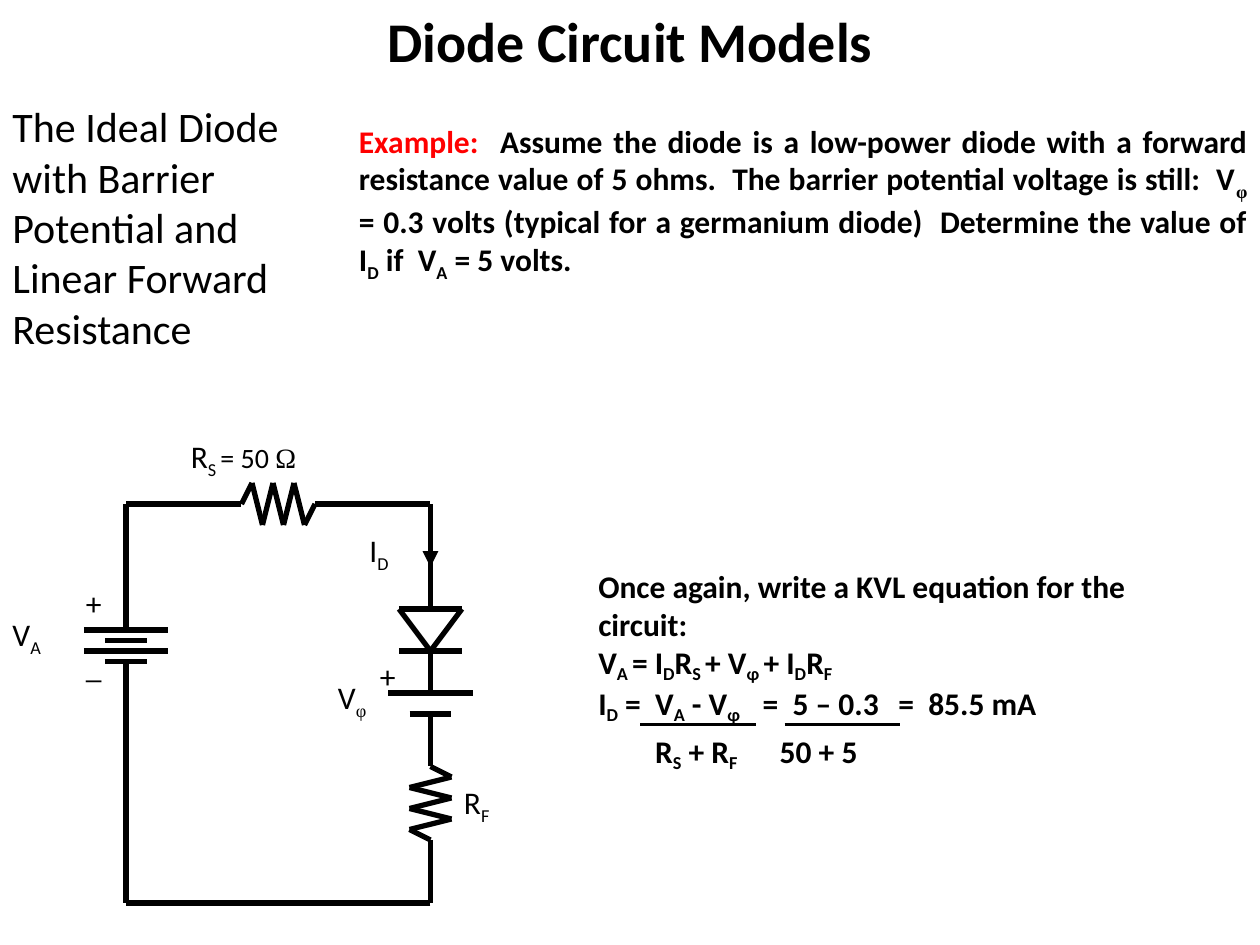
from itertools import groupby

from lxml import etree
from pptx import Presentation
from pptx.dml.color import RGBColor
from pptx.enum.shapes import MSO_CONNECTOR
from pptx.enum.text import MSO_ANCHOR, MSO_AUTO_SIZE, PP_ALIGN
from pptx.oxml.ns import qn
from pptx.util import Pt

LINE = MSO_CONNECTOR.STRAIGHT
TOP = MSO_ANCHOR.TOP
GROW = MSO_AUTO_SIZE.SHAPE_TO_FIT_TEXT
LEFT, CENTER, JUST = PP_ALIGN.LEFT, PP_ALIGN.CENTER, PP_ALIGN.JUSTIFY
SANS, SERIF = "Calibri", "Times New Roman"
GRID = 6  # circuit grid step in points


def paint(color, value):
    color.rgb = RGBColor.from_string(value)


def write(para, text, size=18, bold=False, color="000000", greek=SERIF, drop=25):
    """Add text to a paragraph; ~ turns subscript on and off."""
    for i, part in enumerate(text.split("~")):
        for is_greek, chars in groupby(part, lambda c: c in "φΩ"):
            run = para.add_run()
            run.text = "".join(chars)
            font = run.font
            font.size, font.bold = Pt(size), bold
            font.name = greek if is_greek else SANS
            paint(font.color, color)
            if i % 2:
                run._r.get_or_add_rPr().set("baseline", str(-drop * 1000))


def add_tabs(para, *stops):
    tabs = etree.SubElement(para._p.get_or_add_pPr(), qn("a:tabLst"))
    for stop in stops:
        etree.SubElement(tabs, qn("a:tab"), pos=str(Pt(stop)), algn="l")


def place(shape, box):
    shape.left, shape.top, shape.width, shape.height = map(Pt, box)
    frame = shape.text_frame
    frame.word_wrap, frame.auto_size = True, GROW
    frame.vertical_anchor = TOP
    return frame


def add_text(slide, box, text="", align=LEFT, **form):
    frame = place(slide.shapes.add_textbox(0, 0, 0, 0), box)
    para = frame.paragraphs[0]
    para.alignment = align
    if text:
        write(para, text, **form)
    return frame


def add_line(slide, start, end, width=3, arrow=False):
    line = slide.shapes.add_connector(LINE, *map(Pt, (*start, *end)))
    line.line.width = Pt(width)
    paint(line.line.color, "000000")
    if arrow:
        etree.SubElement(line.line._get_or_add_ln(), qn("a:tailEnd"), type="triangle")
    etree.SubElement(line._element.spPr, qn("a:effectLst"))


def add_wire(slide, *points, **form):
    """Join grid points with straight lines."""
    spots = [(x * GRID, y * GRID) for x, y in points]
    for start, end in zip(spots, spots[1:]):
        add_line(slide, start, end, **form)


def draw_circuit(slide):
    # Source side, with the series resistor on top
    zig = [(24 + i, 50 if i % 2 else 46) for i in range(6)]
    add_wire(slide, (12, 60), (12, 48), (23, 48), *zig, (30, 48), (41, 48), (41, 58))
    add_wire(slide, (41, 48), (41, 54), arrow=True)

    # Diode, then the barrier source and forward resistor
    add_wire(slide, (38, 58), (44, 58), (41, 62), (38, 58))
    add_wire(slide, (41, 62), (41, 66))
    zig = [(39 if i % 2 else 43, 74 + i) for i in range(6)]
    add_wire(slide, (41, 68), (41, 73), *zig, (41, 80), (41, 86), (12, 86), (12, 63))

    # Battery plates and diode bar: centre, height, half width
    plates = [(12, 60, 4), (12, 61, 2), (12, 62, 4), (12, 63, 2),
              (41, 62, 3), (41, 66, 4), (41, 68, 2)]
    for x, y, half in plates:
        add_wire(slide, (x - half, y), (x + half, y))

    # Labels
    labels = [("+", 42, 330, 36), ("_", 42, 366, 36), ("V~A~", 0, 348, 48),
              ("I~D~", 204, 300, 48), ("V~φ~", 186, 384, 54),
              ("+", 210, 372, 36), ("R~F~", 258, 444, 60)]
    for text, x, y, width in labels:
        add_text(slide, (x, y, width, 31), text)
    frame = add_text(slide, (102, 246, 108, 31), "R~S ~")
    write(frame.paragraphs[0], "= 50 Ω", size=16)


def solve(slide):
    form = dict(bold=True, greek=SANS, drop=20)
    frame = add_text(slide, (334.8, 320.4, 354, 121),
                     "Once again, write a KVL equation for the circuit:", **form)
    rows = [("V~A ~= I~D~R~S ~+ V~φ ~+ I~D~R~F~", ()),
            ("I~D~ =  V~A~ - V~φ~\t=  5 – 0.3\t=  85.5 mA", (94, 171.5)),
            ("\tR~S~ + R~F~\t50 + 5", (32.5, 103.7))]
    for text, stops in rows:
        para = frame.add_paragraph()
        if stops:
            add_tabs(para, *stops)
        write(para, text, **form)
    # Gap above the denominators
    para.space_before = Pt(3.6)

    # Fraction bars
    for x in (366, 448.4):
        add_line(slide, (x, 414), (x + 66, 414), width=2)


def main():
    deck = Presentation()
    deck.slide_width, deck.slide_height = Pt(720), Pt(540)
    slide = deck.slides.add_slide(deck.slide_layouts[5])

    # Title and topic
    frame = place(slide.shapes.title, (72, 0, 576, 45.4))
    frame.paragraphs[0].alignment = CENTER
    write(frame.paragraphs[0], "Diode Circuit Models", size=32, bold=True)
    add_text(slide, (0, 54, 192, 152.6),
             "The Ideal Diode with Barrier Potential and Linear Forward Resistance",
             size=24)

    # Problem statement
    frame = add_text(slide, (198, 66, 522, 94.3), "Example:  ", align=JUST,
                     bold=True, color="FF0000")
    write(frame.paragraphs[0],
          "Assume the diode is a low-power diode with a forward resistance value "
          "of 5 ohms.  The barrier potential voltage is still:  V~φ~ = 0.3 volts "
          "(typical for a germanium diode)  Determine the value of I~D~ if  "
          "V~A~ = 5 volts.", bold=True)

    draw_circuit(slide)
    solve(slide)
    deck.save("out.pptx")


if __name__ == "__main__":
    main()
